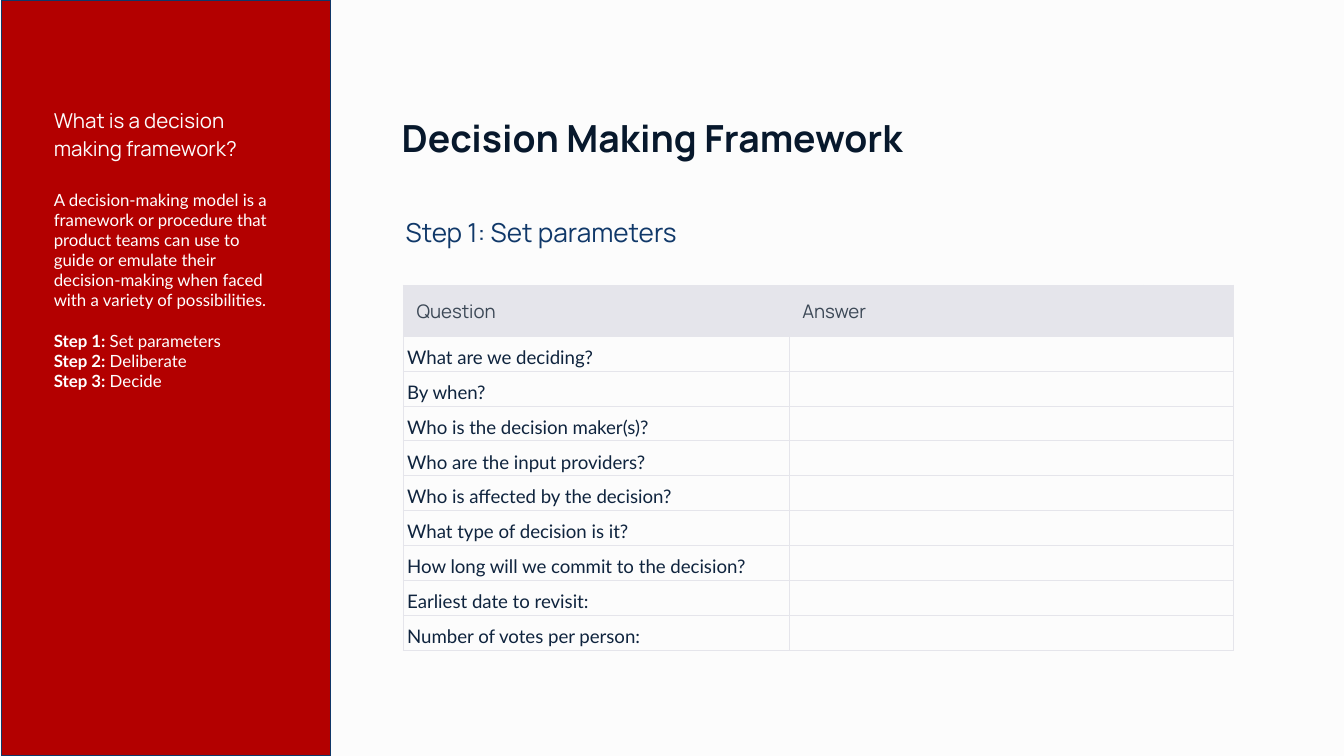
from dataclasses import dataclass

from lxml import etree
from pptx import Presentation
from pptx import util as u
from pptx.dml.color import RGBColor
from pptx.enum import shapes, text
from pptx.oxml import ns


@dataclass(frozen=True)
class Theme:
    page: str = "FCFCFC"
    red: str = "B30000"
    blue: str = "103869"
    navy: str = "07182C"
    ink: str = "0F243E"
    slate: str = "3C4856"
    grid: str = "E5E5EB"
    white: str = "FFFFFF"
    head: str = "Manrope"
    body: str = "Lato"
    title: float = 20
    step: float = 14
    lead: float = 11
    cell: float = 10
    note: float = 9
    hair: float = 0.42


T = Theme()
WIDE = 10
HIGH = WIDE * 9 / 16
PAD = (0.1, 0.1, 0.1, 0.1)
SIDE = (0.2, 0.1, 0.2, 0.1)
TIGHT = (0.03, 0.02, 0.03, 0.02)

ABOUT = ("A decision-making model is a framework or procedure that product "
         "teams can use to guide or emulate their decision-making when faced "
         "with a variety of possibilities.")
STEPS = ["Set parameters", "Deliberate", "Decide"]
ASKS = [
    "What are we deciding?",
    "By when?",
    "Who is the decision maker(s)?",
    "Who are the input providers?",
    "Who is affected by the decision?",
    "What type of decision is it?",
    "How long will we commit to the decision?",
    "Earliest date to revisit:",
    "Number of votes per person:",
]


def rgb(code):
    return RGBColor.from_string(code)


def write(para, words, font, size, color, bold=False, line=None, after=0):
    """Add one formatted run to a paragraph."""
    run = para.add_run()
    run.text = words
    run.font.name = font
    run.font.size = u.Pt(size)
    run.font.bold = bold
    run.font.color.rgb = rgb(color)
    para.space_after = u.Pt(after)
    if line:
        para.line_spacing = line


def inset(item, sides):
    """Set the margins of a cell or text frame."""
    (item.margin_left, item.margin_top,
     item.margin_right, item.margin_bottom) = map(u.Inches, sides)


def label(slide, box, words, **style):
    frame = slide.shapes.add_textbox(*map(u.Inches, box)).text_frame
    frame.word_wrap = True
    inset(frame, PAD)
    write(frame.paragraphs[0], words, **style)


def edge(cell, color):
    """Draw a thin line on all four sides of a cell."""
    props = cell._tc.get_or_add_tcPr()
    for spot, side in enumerate(("a:lnL", "a:lnR", "a:lnT", "a:lnB")):
        line = etree.Element(ns.qn(side), w=str(u.Pt(T.hair)))
        fill = etree.SubElement(line, ns.qn("a:solidFill"))
        etree.SubElement(fill, ns.qn("a:srgbClr"), val=color)
        props.insert(spot, line)


def grid(slide, left, top, cols, rows, line):
    """Add a plain table with unfilled cells and one border colour."""
    spots = map(u.Inches, (left, top, sum(cols), sum(rows)))
    table = slide.shapes.add_table(len(rows), len(cols), *spots).table
    table.first_row = table.horz_banding = False
    for col, width in zip(table.columns, cols):
        col.width = u.Inches(width)
    for row, height in zip(table.rows, rows):
        row.height = u.Inches(height)
    for cell in table.iter_cells():
        cell.fill.background()
        inset(cell, TIGHT)
        edge(cell, line)
        # Keep empty cells from stretching their row
        mark = cell.text_frame.paragraphs[0]._p.get_or_add_endParaRPr()
        mark.set("sz", str(int(T.cell * 100)))
    return table


def paint(cell, color):
    cell.fill.solid()
    cell.fill.fore_color.rgb = rgb(color)


def panel(slide):
    # Red side bar
    bar = slide.shapes.add_shape(
        shapes.MSO_SHAPE.RECTANGLE,
        *map(u.Inches, (0.01, 0, 2.45, HIGH)))
    bar.shadow.inherit = False
    bar.fill.solid()
    bar.fill.fore_color.rgb = rgb(T.red)
    bar.line.color.rgb = rgb(T.blue)
    bar.line.width = u.Pt(0.75)

    # Explanation table
    table = grid(slide, 0.2, 0.69, (0.62, 0.64, 0.8),
                 (0.62, 0.46, 0.46, 0.74), T.red)
    for cell in table.iter_cells():
        paint(cell, T.red)
    lead, note = table.cell(0, 0), table.cell(1, 0)
    lead.merge(table.cell(0, 2))
    note.merge(table.cell(3, 2))
    for cell in (lead, note):
        inset(cell, SIDE)
    lead.vertical_anchor = text.MSO_ANCHOR.MIDDLE
    write(lead.text_frame.paragraphs[0], "What is a decision making framework?",
          font=T.head, size=T.lead, color=T.page)
    style = dict(font=T.body, size=T.note, color=T.white)
    write(note.text_frame.paragraphs[0], ABOUT, after=10.8, **style)
    for num, step in enumerate(STEPS, 1):
        para = note.text_frame.add_paragraph()
        write(para, f"Step {num}:", bold=True, **style)
        write(para, f" {step}", **style)


def sheet(slide):
    # Question and answer table
    table = grid(slide, 3, 2.12, (2.87, 2.64, 0.67),
                 [0.38] + [0.26] * len(ASKS), T.grid)
    for col, name in enumerate(("Question", "Answer", "")):
        cell = table.cell(0, col)
        paint(cell, T.grid)
        if name:
            inset(cell, PAD)
            cell.vertical_anchor = text.MSO_ANCHOR.MIDDLE
            write(cell.text_frame.paragraphs[0], name,
                  font=T.head, size=T.cell, color=T.slate)
    for row, ask in enumerate(ASKS, 1):
        cell = table.cell(row, 0)
        cell.vertical_anchor = text.MSO_ANCHOR.BOTTOM
        write(cell.text_frame.paragraphs[0], ask, font=T.body,
              size=T.cell, color=T.ink, line=1.15)
        table.cell(row, 1).merge(table.cell(row, 2))


def main():
    deck = Presentation()
    deck.slide_width, deck.slide_height = u.Inches(WIDE), u.Inches(HIGH)
    slide = deck.slides.add_slide(deck.slide_layouts[6])
    slide.background.fill.solid()
    slide.background.fill.fore_color.rgb = rgb(T.page)

    panel(slide)
    # Headings
    label(slide, (2.89, 0.76, 6.18, 0.59), "Decision Making Framework",
          font=T.head, size=T.title, color=T.navy, bold=True)
    label(slide, (2.92, 1.51, 3.28, 0.44), "Step 1: Set parameters",
          font=T.head, size=T.step, color=T.blue)
    sheet(slide)
    deck.save("out.pptx")


if __name__ == "__main__":
    main()
